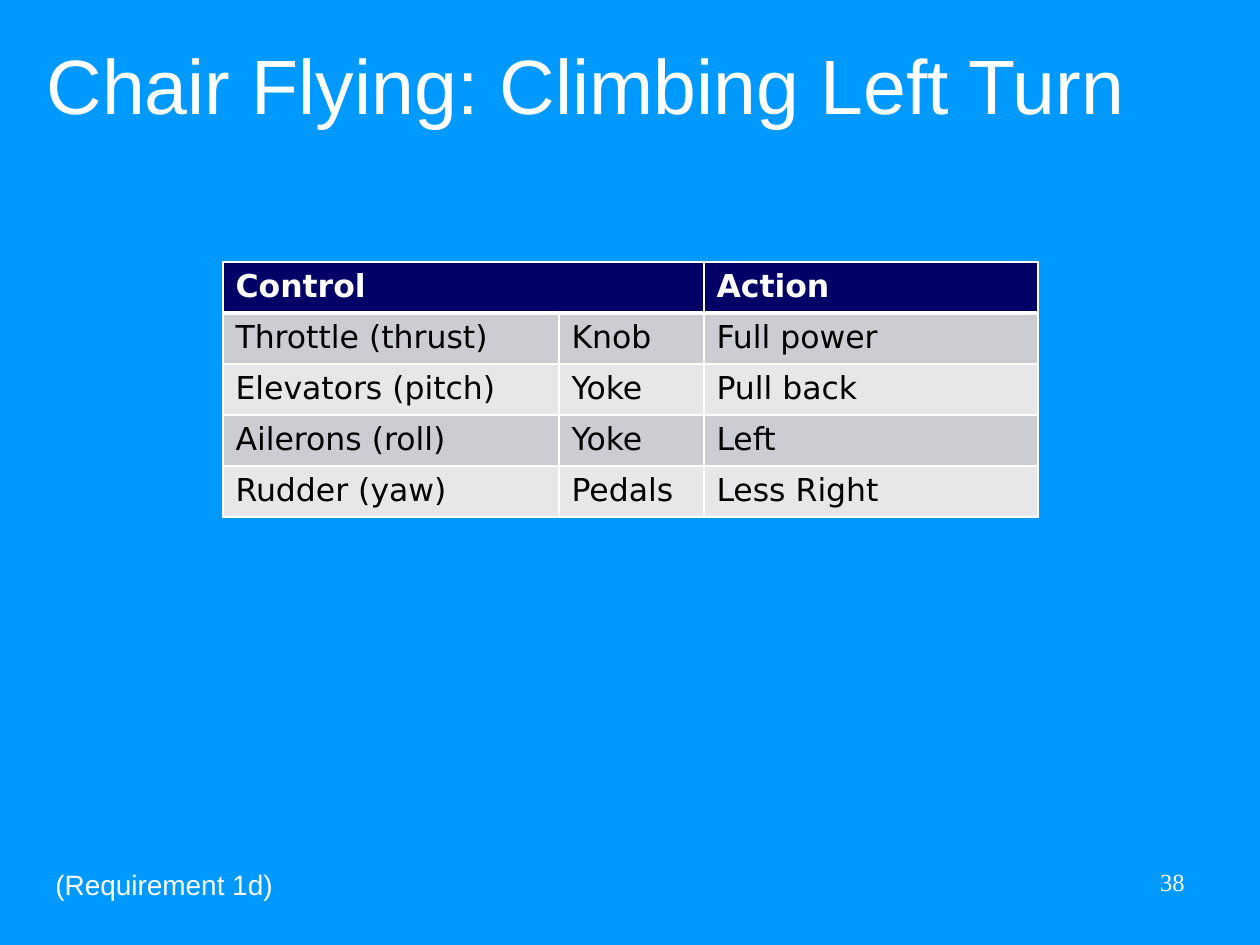
from lxml import etree
from pptx import Presentation
from pptx.dml.color import RGBColor
from pptx.enum.text import MSO_ANCHOR as Anchor, MSO_AUTO_SIZE as AutoSize, PP_ALIGN as Align
from pptx.oxml.ns import qn
from pptx.util import Pt

PX = 914400 // 126
WHITE, BLACK, NAVY, SKY = "FFFFFF", "000000", "000066", "0099FF"
BANDS = ("CCCCD3", "E7E7EA")
COLUMNS = (336, 145, 334)
ROW_HEIGHT = 51
ROWS = (
    ("Control", "", "Action"),
    ("Throttle (thrust)", "Knob", "Full power"),
    ("Elevators (pitch)", "Yoke", "Pull back"),
    ("Ailerons (roll)", "Yoke", "Left"),
    ("Rudder (yaw)", "Pedals", "Less Right"),
)


def px(length):
    return length * PX


def color(value):
    return RGBColor.from_string(value)


def write(frame, text, size, font="Arial", fill=WHITE, bold=False,
          align=Align.LEFT, anchor=Anchor.TOP, wrap=True):
    frame.word_wrap = wrap
    frame.vertical_anchor = anchor
    para = frame.paragraphs[0]
    para.alignment = align
    span = para.add_run()
    span.text = text
    span.font.size = Pt(size)
    span.font.name = font
    span.font.bold = bold
    span.font.color.rgb = color(fill)


def add_title(page, text):
    title = page.shapes.title
    title.left, title.top, title.width, title.height = map(px, (34, 16, 1191, 120))
    title.text_frame.auto_size = AutoSize.NONE
    write(title.text_frame, text, 44, anchor=Anchor.BOTTOM)


def add_label(page, text, left, top, width, height, size, **style):
    box = page.shapes.add_textbox(px(left), px(top), px(width), px(height))
    write(box.text_frame, text, size, **style)
    return box


def set_borders(cell, **widths):
    properties = cell._tc.get_or_add_tcPr()
    for side in "LRTB":
        line = etree.SubElement(properties, qn(f"a:ln{side}"),
                                w=str(Pt(widths.get(side, 1))))
        fill = etree.SubElement(line, qn("a:solidFill"))
        etree.SubElement(fill, qn("a:srgbClr"), val=WHITE)


def add_control_table(page, left, top):
    frame = page.shapes.add_table(len(ROWS), len(COLUMNS), px(left), px(top),
                                  px(sum(COLUMNS)), px(ROW_HEIGHT * len(ROWS)))
    table = frame.table
    for column, width in zip(table.columns, COLUMNS):
        column.width = px(width)
    for row, texts in enumerate(ROWS):
        table.rows[row].height = px(ROW_HEIGHT)
        header = row == 0
        for column, text in enumerate(texts):
            cell = table.cell(row, column)
            # A thick rule separates the header from the body
            set_borders(cell, B=3 if header else 1, T=3 if row == 1 else 1)
            cell.fill.solid()
            cell.fill.fore_color.rgb = color(NAVY if header else BANDS[(row - 1) % 2])
            if text:
                write(cell.text_frame, text, 18, font="DejaVu Sans",
                      fill=WHITE if header else BLACK, bold=header)
    table.cell(0, 0).merge(table.cell(0, 1))


def main():
    deck = Presentation()
    deck.slide_width, deck.slide_height = px(1260), px(945)
    page = deck.slides.add_slide(deck.slide_layouts[5])
    page.background.fill.solid()
    page.background.fill.fore_color.rgb = color(SKY)

    # Title and table
    add_title(page, "Chair Flying: Climbing Left Turn")
    add_control_table(page, 223, 262)

    # Footer
    add_label(page, "38", 903, 861, 294, 65, 14,
              font="Times New Roman", align=Align.RIGHT)
    requirement = add_label(page, "(Requirement 1d)", 43, 861, 246, 47, 16,
                            anchor=Anchor.MIDDLE, wrap=False)
    requirement.text_frame.auto_size = AutoSize.SHAPE_TO_FIT_TEXT

    deck.save("out.pptx")


if __name__ == "__main__":
    main()
